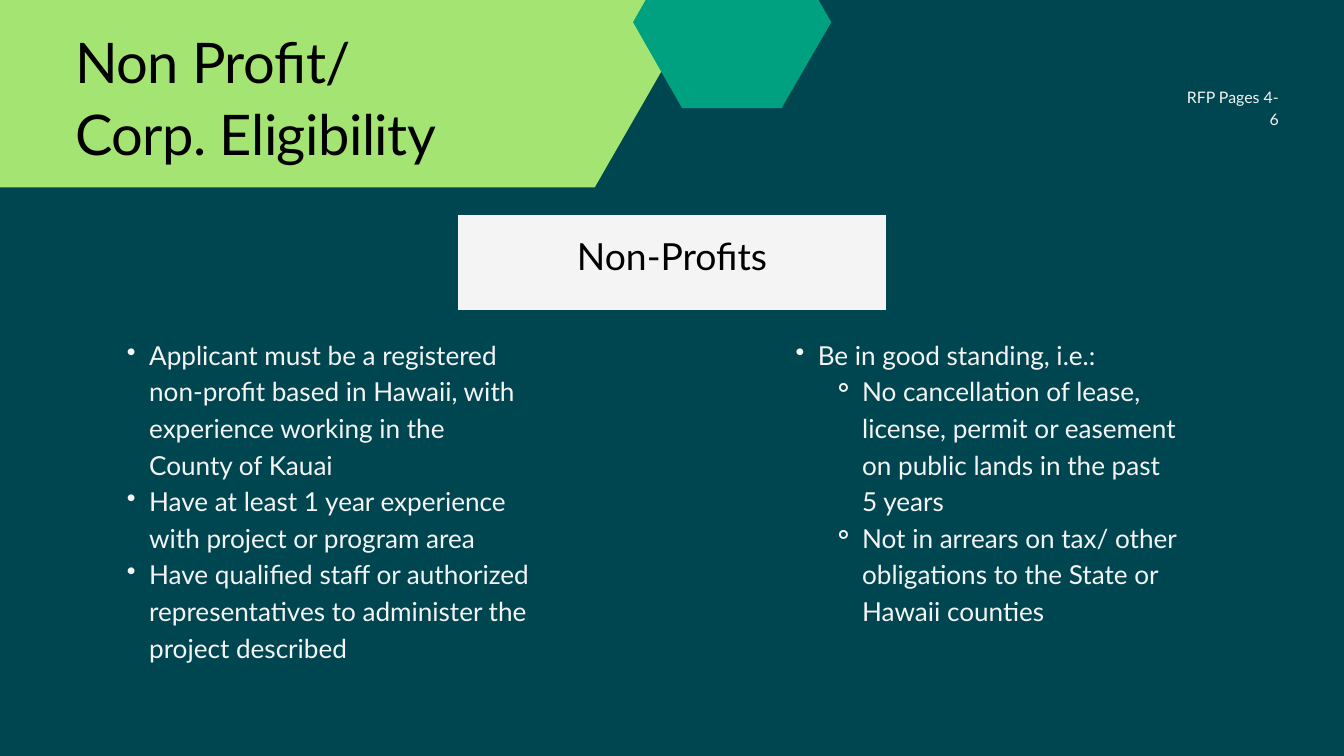
import pptx
import pptx.util
import pptx.dml.color
import pptx.enum.text
import pptx.oxml.ns
from lxml import etree

Inches, Pt = pptx.util.Inches, pptx.util.Pt
ALIGN = pptx.enum.text.PP_ALIGN
ANCHOR = pptx.enum.text.MSO_ANCHOR

COLORS = {"background": "004651", "lime": "A4E473", "green": "00A181",
          "light": "F4F4F4", "black": "000000"}
FONT = "Lato"

# Outlines: fill and corner points in inches
OUTLINES = [
    ("light", [(6.81, 3.2), (13.19, 3.2), (13.19, 4.62), (6.81, 4.62)]),
    ("lime", [(-1.22, 2.79), (8.85, 2.79), (10.81, -0.62),
              (8.85, -4.02), (-1.22, -4.02), (-3.19, -0.62)]),
    ("green", [(11.63, -0.95), (10.15, -0.95), (9.42, 0.33),
               (10.15, 1.61), (11.63, 1.61), (12.37, 0.33)]),
]

# Text styles: size and line spacing in points
STYLES = {
    "label": {"size": 40, "line": 52, "color": "black", "align": ALIGN.CENTER,
              "anchor": ANCHOR.MIDDLE, "inset": 0.28},
    "body": {"size": 28, "line": 39.2, "color": "light"},
    "pages": {"size": 17, "line": 23.8, "color": "light", "align": ALIGN.RIGHT},
    "title": {"size": 60, "line": 78, "color": "black", "spacing": -0.6},
}

# Bullet levels: character, left margin, hanging indent in inches
BULLETS = {1: ("•", 0.66, 0.33), 2: ("⚬", 1.32, 0.44)}

# Text boxes: style, (left, top, width, height), [(bullet level, text)]
TEXTS = [
    ("label", (6.81, 2.94, 6.38, 1.68), [(0, "Non-Profits")]),
    ("body", (1.56, 4.97, 6.38, 5.94), [
        (1, "Applicant must be a registered non-profit based in Hawaii, "
            "with experience working in the County of Kauai"),
        (1, "Have at least 1 year experience with project or program area"),
        (1, "Have qualified staff or authorized representatives to "
            "administer the project described"),
    ]),
    ("body", (11.51, 4.97, 6.03, 4.86), [
        (1, "Be in good standing, i.e.:"),
        (2, "No cancellation of lease, license, permit or easement on "
            "public lands in the past 5 years"),
        (2, "Not in arrears on tax/ other obligations to the State or "
            "Hawaii counties"),
    ]),
    ("pages", (17.54, 1.25, 1.49, 0.32), [(0, "RFP Pages 4-6")]),
    ("title", (1.12, 0.32, 7.25, 2.16),
     [(0, "Non Profit/"), (0, "Corp. Eligibility")]),
]


def color(name):
    return pptx.dml.color.RGBColor.from_string(COLORS[name])


def set_all(target, values):
    for name, value in values.items():
        setattr(target, name, value)


def add_outline(slide, fill, points):
    corners = [(Inches(x), Inches(y)) for x, y in points]
    builder = slide.shapes.build_freeform(*corners[0], scale=1.0)
    builder.add_line_segments(corners[1:], close=True)
    shape = builder.convert_to_shape()
    shape.shadow.inherit = False
    shape.fill.solid()
    shape.fill.fore_color.rgb = color(fill)
    shape.line.fill.background()


def add_bullet(paragraph, level):
    character, margin, hanging = BULLETS[level]
    paragraph.level = level
    properties = paragraph._p.get_or_add_pPr()
    properties.set("marL", str(Inches(margin)))
    properties.set("indent", str(-Inches(hanging)))
    bullet = etree.SubElement(properties, pptx.oxml.ns.qn("a:buChar"))
    bullet.set("char", character)


def add_text(slide, style_name, box, lines):
    style = STYLES[style_name]
    frame = slide.shapes.add_textbox(*map(Inches, box)).text_frame
    inset = Inches(style.get("inset", 0))
    set_all(frame, {"word_wrap": True,
                    "vertical_anchor": style.get("anchor", ANCHOR.TOP),
                    "margin_left": inset, "margin_right": inset,
                    "margin_top": inset, "margin_bottom": inset})
    for index, (level, text) in enumerate(lines):
        paragraph = frame.add_paragraph() if index else frame.paragraphs[0]
        set_all(paragraph, {"line_spacing": Pt(style["line"]),
                            "alignment": style.get("align", ALIGN.LEFT)})
        if level:
            add_bullet(paragraph, level)
        run = paragraph.add_run()
        run.text = text
        set_all(run.font, {"name": FONT, "size": Pt(style["size"])})
        run.font.color.rgb = color(style["color"])
        if "spacing" in style:
            run._r.get_or_add_rPr().set("spc", str(round(style["spacing"] * 100)))


def main():
    presentation = pptx.Presentation()
    set_all(presentation, {"slide_width": Inches(20),
                           "slide_height": Inches(11.25)})
    slide = presentation.slides.add_slide(presentation.slide_layouts[6])
    slide.background.fill.solid()
    slide.background.fill.fore_color.rgb = color("background")

    # Label panel, title banner and hexagon, then all text
    for fill, points in OUTLINES:
        add_outline(slide, fill, points)
    for style_name, box, lines in TEXTS:
        add_text(slide, style_name, box, lines)

    presentation.save("out.pptx")


if __name__ == "__main__":
    main()
